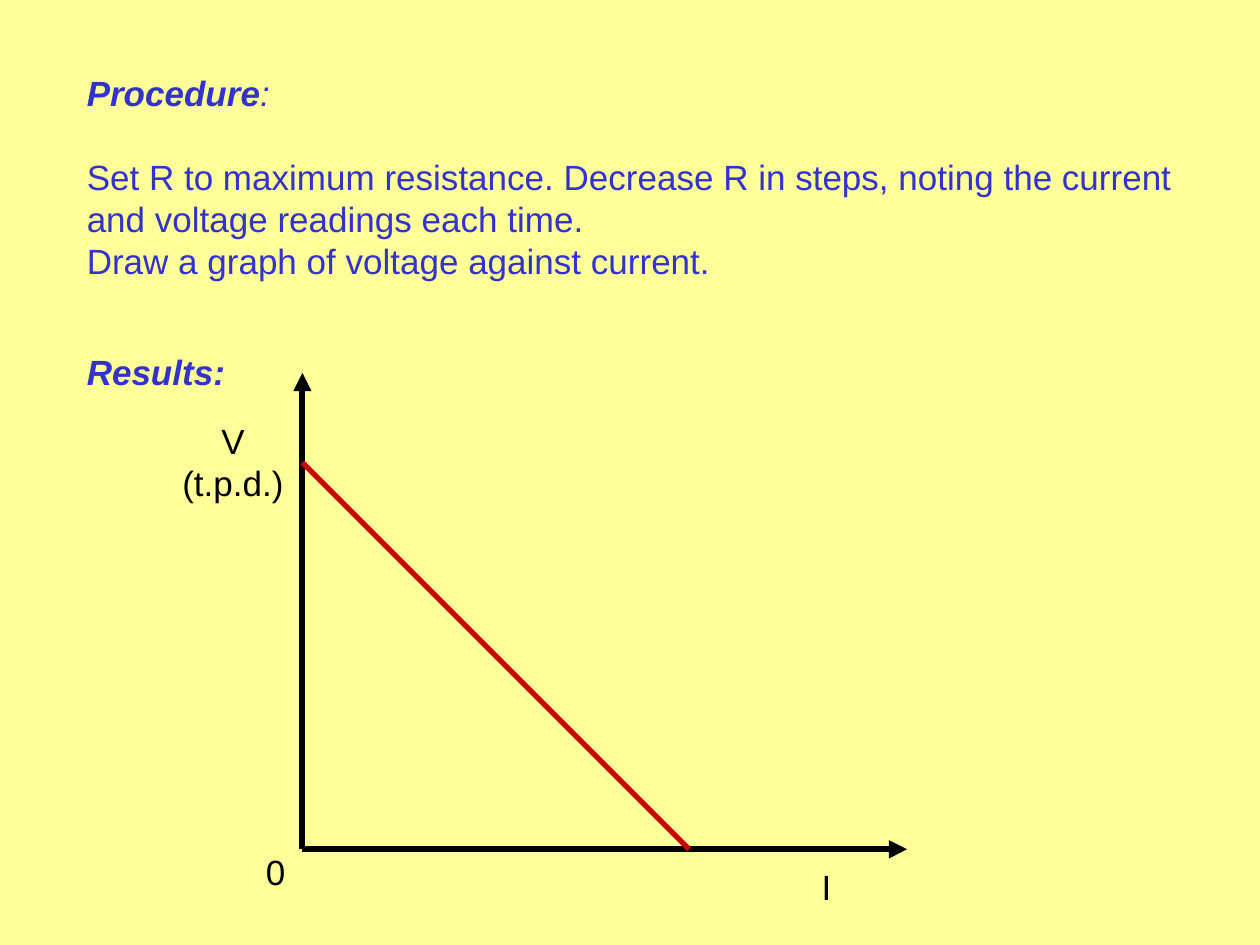
from lxml.etree import SubElement
from pptx import Presentation
from pptx.dml.color import RGBColor
from pptx.enum.shapes import MSO_CONNECTOR
from pptx.enum.text import MSO_AUTO_SIZE, PP_ALIGN
from pptx.oxml.ns import qn
from pptx.util import Pt

COLORS = {"background": "FFFF99", "prose": "3333CC", "axis": "000000", "plot": "CC0000"}
FONT = "Arial"
TEXT_SIZE = 20
LINE_HEIGHT = 24


def add_text(slide, box, paragraphs, color, align=PP_ALIGN.LEFT):
    """Add a wrapped text box from paragraphs of (text, bold, italic) runs."""
    frame = slide.shapes.add_textbox(*map(Pt, box)).text_frame
    frame.word_wrap = True
    frame.auto_size = MSO_AUTO_SIZE.SHAPE_TO_FIT_TEXT
    for index, runs in enumerate(paragraphs):
        paragraph = frame.add_paragraph() if index else frame.paragraphs[0]
        paragraph.alignment = align
        for wording, bold, italic in runs:
            run = paragraph.add_run()
            run.text = wording
            run.font.name = FONT
            run.font.size = Pt(TEXT_SIZE)
            run.font.bold = bold
            run.font.italic = italic
            run.font.color.rgb = RGBColor.from_string(COLORS[color])
    return frame


def add_line(slide, start, end, color, weight, arrow=False):
    """Draw a straight line, with an optional arrowhead at its end."""
    line = slide.shapes.add_connector(MSO_CONNECTOR.STRAIGHT, *map(Pt, (*start, *end)))
    line.line.color.rgb = RGBColor.from_string(COLORS[color])
    line.line.width = Pt(weight)
    if arrow:
        SubElement(line.line._get_or_add_ln(), qn("a:tailEnd"), type="triangle")
    SubElement(line._element.spPr, qn("a:effectLst"))


def add_procedure(slide, left, top, width, height):
    """Place the procedure heading and its instructions."""
    procedure = add_text(slide, (left, top, width, height), [
        [("Procedure", True, True), (":", False, True)],
        [("Set R to maximum resistance. Decrease R in steps, noting the current "
          "and voltage readings each time.", False, False)],
        [("Draw a graph of voltage against current.", False, False)],
    ], "prose")
    procedure.paragraphs[0].space_after = Pt(LINE_HEIGHT)


def add_results_heading(slide, left, top, width, height):
    """Place the results heading."""
    add_text(slide, (left, top, width, height), [[("Results:", True, True)]], "prose")


def add_graph(slide, left, top, width, height):
    """Draw the voltage against current graph with its axes filling the box."""
    bottom = top + height
    origin = (left, bottom)
    intercept = 221
    add_line(slide, origin, (left, top), "axis", 3.5, arrow=True)
    add_line(slide, origin, (left + width, bottom), "axis", 3.5, arrow=True)
    labels = [
        ("0", (left - 28, bottom - 3, 34, 31), PP_ALIGN.LEFT),
        ("I", (left + width - 56, bottom + 5.8, 34, 31), PP_ALIGN.LEFT),
        ("V (t.p.d.)", (left - 85, top + 23, 90.7, 55.4), PP_ALIGN.CENTER),
    ]
    for wording, box, align in labels:
        add_text(slide, box, [[(wording, False, False)]], "axis", align)
    add_line(slide, (left, bottom - intercept), (left + intercept, bottom), "plot", 3)


def main():
    """Build and save the slide."""
    presentation = Presentation()
    presentation.slide_width = Pt(720)
    presentation.slide_height = Pt(540)
    slide = presentation.slides.add_slide(presentation.slide_layouts[6])
    slide.background.fill.solid()
    slide.background.fill.fore_color.rgb = RGBColor.from_string(COLORS["background"])
    add_procedure(slide, 42.5, 37.5, 635, 127.4)
    add_results_heading(slide, 42.5, 196.5, 193, 31)
    add_graph(slide, 172.8, 213.1, 345.6, 272.2)
    presentation.save("out.pptx")


if __name__ == "__main__":
    main()
